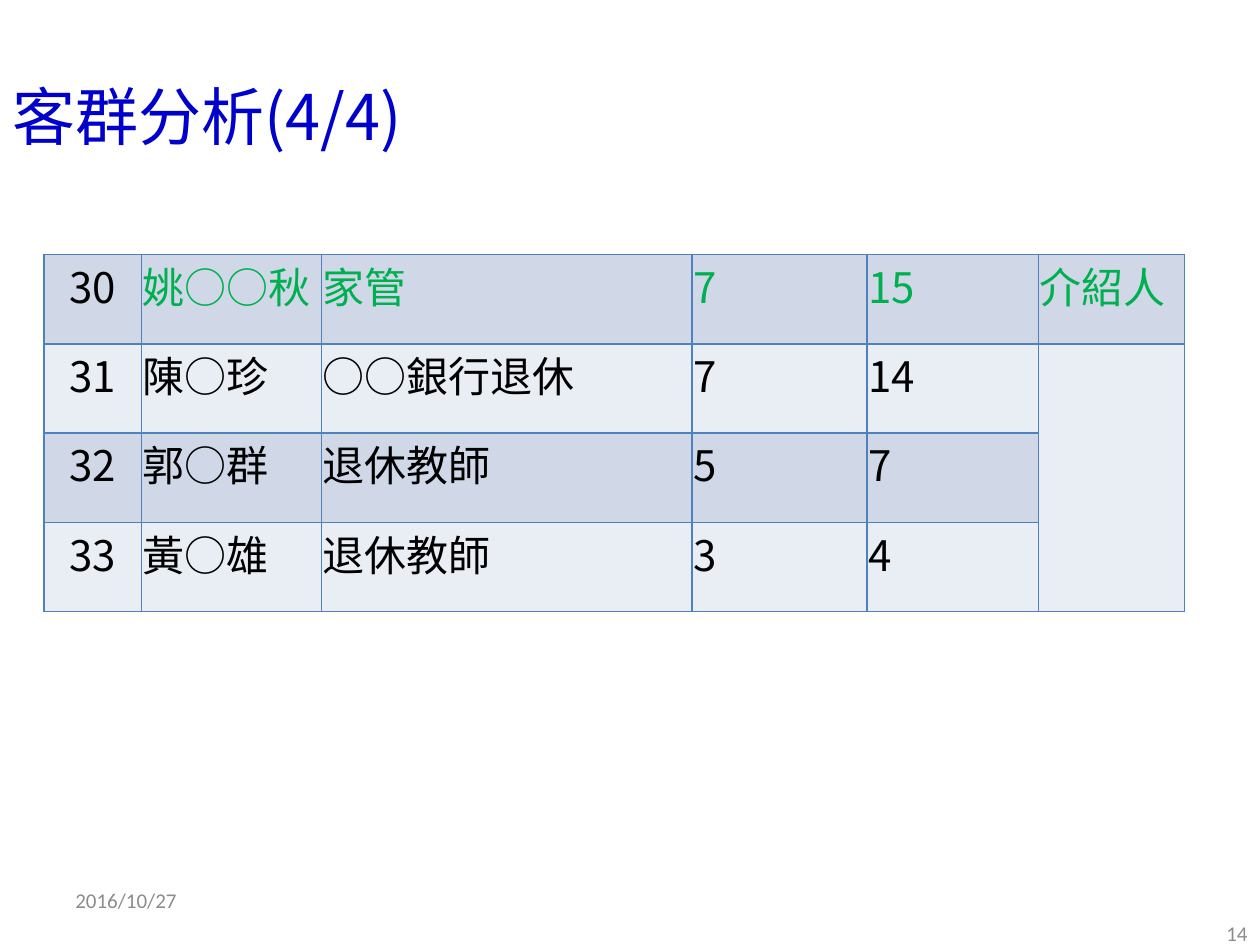
from dataclasses import dataclass

from lxml import etree
from pptx import Presentation
from pptx.dml.color import RGBColor
from pptx.enum.text import MSO_ANCHOR, PP_ALIGN
from pptx.oxml.ns import qn
from pptx.util import Cm, Pt

LEFT, CENTER, RIGHT = PP_ALIGN.LEFT, PP_ALIGN.CENTER, PP_ALIGN.RIGHT
JUSTIFY = PP_ALIGN.JUSTIFY
MIDDLE = MSO_ANCHOR.MIDDLE

COLORS = {
    "title": "0000CC",
    "text": "000000",
    "referrer": "00B050",
    "footer": "8C8C8C",
    "border": "4F81BD",
    "dark_band": "D0D8E8",
    "light_band": "E9EDF4",
}
TITLE_FONT, TABLE_FONT, FOOTER_FONT = "Noto Sans CJK SC", "Noto Sans CJK TC", "Calibri"

COL_WIDTHS = (1.96, 3.63, 7.47, 3.53, 3.45, 2.95)
ROW_HEIGHT = 1.8
CLIENTS = (
    ("30", "姚○○秋", "家管", "7", "15", "介紹人"),
    ("31", "陳○珍", "○○銀行退休", "7", "14", ""),
    ("32", "郭○群", "退休教師", "5", "7", ""),
    ("33", "黃○雄", "退休教師", "3", "4", ""),
)


@dataclass
class Label:
    text: str
    left: float
    top: float
    width: float
    height: float
    size: int
    font: str
    color: str
    align: PP_ALIGN = LEFT


LABELS = (
    Label("客群分析(4/4)", 0, 0.74, 25.4, 3.18, 36, TITLE_FONT, "title"),
    Label("14", 19.48, 18.31, 5.92, 1.01, 12, FOOTER_FONT, "footer", RIGHT),
    Label("2016/10/27", 1.27, 17.65, 5.92, 1.01, 12, FOOTER_FONT, "footer"),
)


def style_paragraph(p, size: int, font: str, color: str, align: PP_ALIGN) -> None:
    """Style a paragraph, using the same font for Latin and East Asian text."""
    p.alignment = align
    p.font.size = Pt(size)
    p.font.color.rgb = RGBColor.from_string(COLORS[color])
    p.font.name = font
    props = p._p.pPr.find(qn("a:defRPr"))
    etree.SubElement(props, qn("a:ea"), typeface=font)


def add_label(s, label: Label) -> None:
    box = s.shapes.add_textbox(
        Cm(label.left), Cm(label.top), Cm(label.width), Cm(label.height))
    tf = box.text_frame
    tf.word_wrap = True
    tf.vertical_anchor = MIDDLE
    p = tf.paragraphs[0]
    p.text = label.text
    style_paragraph(p, label.size, label.font, label.color, label.align)


def add_borders(cell) -> None:
    tc_pr = cell._tc.get_or_add_tcPr()
    for side in ("a:lnL", "a:lnR", "a:lnT", "a:lnB"):
        line = etree.SubElement(tc_pr, qn(side), w=str(Pt(1)))
        fill = etree.SubElement(line, qn("a:solidFill"))
        etree.SubElement(fill, qn("a:srgbClr"), val=COLORS["border"])


def format_cell(cell, band: str) -> None:
    add_borders(cell)
    cell.fill.solid()
    cell.fill.fore_color.rgb = RGBColor.from_string(COLORS[band])
    cell.margin_left = cell.margin_right = Cm(0.03)
    cell.margin_top = cell.margin_bottom = 0


def add_client_table(s) -> None:
    rows, cols = len(CLIENTS), len(COL_WIDTHS)
    table = s.shapes.add_table(
        rows, cols, Cm(0.89), Cm(5.13),
        Cm(sum(COL_WIDTHS)), Cm(rows * ROW_HEIGHT)).table
    table.first_row = False
    for column, width in zip(table.columns, COL_WIDTHS):
        column.width = Cm(width)
    for i, client in enumerate(CLIENTS):
        table.rows[i].height = Cm(ROW_HEIGHT)
        for j, text in enumerate(client):
            cell = table.cell(i, j)
            in_light_band = i % 2 or (i > 0 and j == cols - 1)
            format_cell(cell, "light_band" if in_light_band else "dark_band")
            p = cell.text_frame.paragraphs[0]
            p.text = text
            color = "referrer" if i == 0 and j > 0 else "text"
            style_paragraph(p, 24, TABLE_FONT, color, JUSTIFY if j else CENTER)
    table.cell(1, cols - 1).merge(table.cell(rows - 1, cols - 1))


def main() -> None:
    prs = Presentation()
    prs.slide_width, prs.slide_height = Cm(25.4), Cm(19.05)
    s = prs.slides.add_slide(prs.slide_layouts[6])
    add_client_table(s)
    for label in LABELS:
        add_label(s, label)
    prs.save("out.pptx")


if __name__ == "__main__":
    main()
